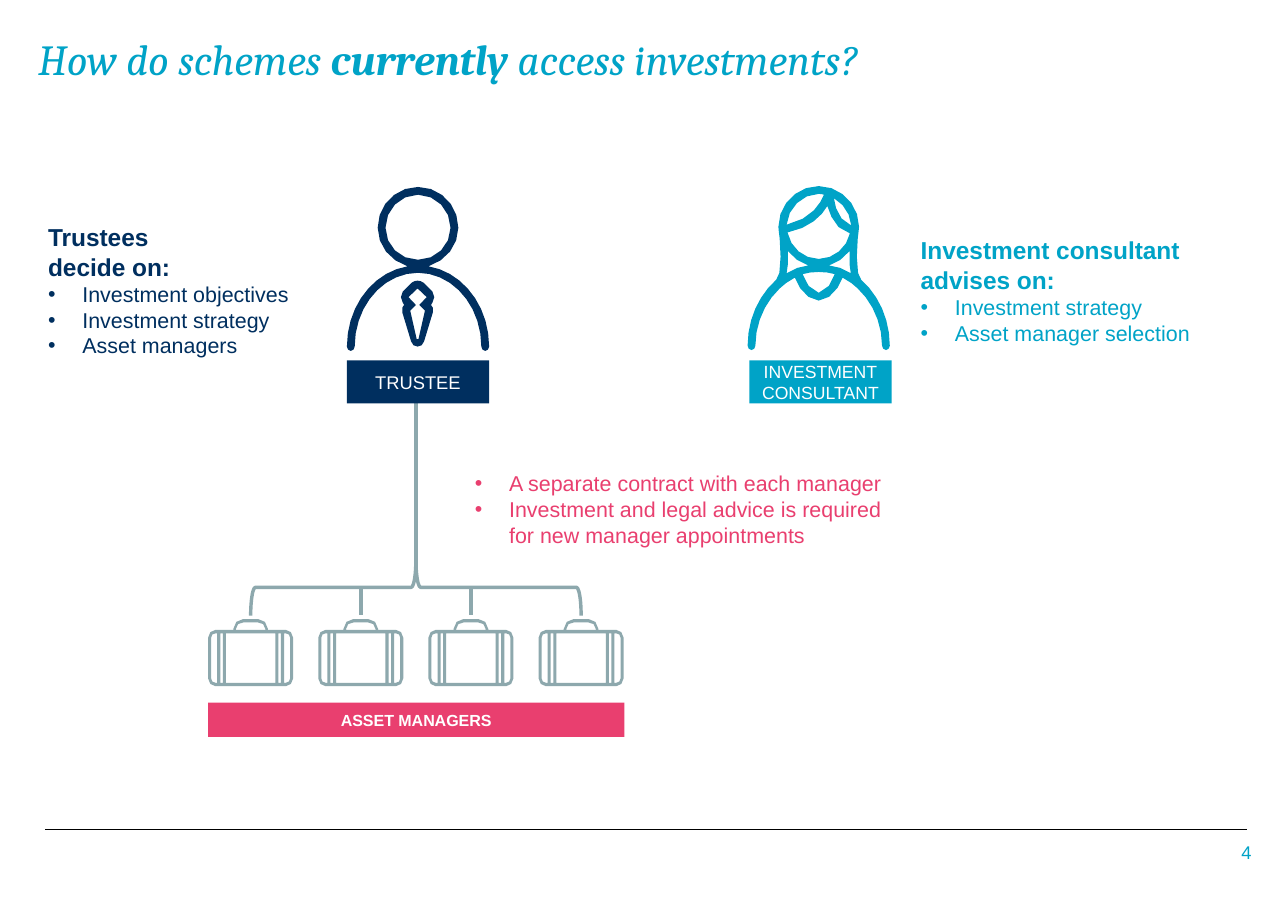
from dataclasses import dataclass
from math import dist

from lxml import etree
from pptx import Presentation
from pptx.dml.color import RGBColor as Rgb
from pptx.enum.shapes import MSO_CONNECTOR as Link, MSO_SHAPE as Shape
from pptx.enum.text import MSO_ANCHOR as Anchor, MSO_AUTO_SIZE as Fit, PP_ALIGN as Align
from pptx.oxml.ns import qn
from pptx.util import Cm, Pt

# Content
TITLE = [("How do schemes ", False), ("currently", True), (" access investments?", False)]
PAGE = "4"
# colour, box in cm, heading, bullets
NOTES = [
    ("navy", (0.86, 5, 6.99, 3.43), "Trustees\vdecide on:",
     ["Investment objectives", "Investment strategy", "Asset managers"]),
    ("cyan", (20.98, 5.3, 7.47, 2.82), "Investment consultant advises on:",
     ["Investment strategy", "Asset manager selection"]),
    ("pink", (10.7, 10.72, 10.24, 2.06), None,
     ["A separate contract with each manager",
      "Investment and legal advice is required for new manager appointments"]),
]
# colour, box in cm, lines, type size, bold
TAGS = [
    ("navy", (8, 8.31, 3.28, 0.99), ["TRUSTEE"], 12, False),
    ("cyan", (17.28, 8.31, 3.28, 0.99), ["INVESTMENT", "CONSULTANT"], 11.5, False),
    ("pink", (4.8, 16.2, 9.6, 0.79), ["ASSET MANAGERS"], 10.5, True),
]

# Icon outlines in cm: a start, then line ends (x, y) or curves (x1, y1, x2, y2, x, y).
# x runs from the icon's axis, y from its top. How the right side is completed:
JOIN, PAIR, ONCE = "joined to its mirror", "repeated as its mirror", "drawn as it is"
CAP = [(1.64, 3.73, 1.6, 3.78, 1.55, 3.78), (1.5, 3.78, 1.46, 3.73, 1.46, 3.68)]
MAN = [
    (JOIN, [(0, 0), (0.52, 0, 0.93, 0.43, 0.93, 0.94), (0.93, 1.35, 0.65, 1.7, 0.24, 1.83),
            (1.03, 1.96, 1.64, 2.74, 1.64, 3.68), *CAP, (1.46, 2.74, 0.8, 1.98, 0, 1.98)]),
    (JOIN, [(0, 0.18), (0.42, 0.18, 0.75, 0.53, 0.75, 0.94), (0.75, 1.35, 0.42, 1.68, 0, 1.68)]),
]
TIE = [
    (JOIN, [(0, 2.16), (0.05, 2.16, 0.1, 2.18, 0.14, 2.21), (0.34, 2.41),
            (0.4, 2.49, 0.4, 2.59, 0.34, 2.67), (0.31, 2.72),
            (0.34, 2.74, 0.38, 2.81, 0.35, 2.9), (0.15, 3.56), (0.13, 3.64, 0.07, 3.68, 0, 3.68)]),
    (JOIN, [(0, 2.34), (0.21, 2.54), (0.04, 2.72), (0.17, 2.85), (0.02, 3.51)]),
]
WOMAN = [
    (JOIN, [(0, 0), (0.51, 0, 0.93, 0.43, 0.93, 0.94), (0.92, 1.04),
            (0.92, 1.04, 0.88, 1.32, 0.88, 1.63), (0.88, 1.98, 0.92, 2.1, 0.98, 2.16),
            (1.38, 2.51, 1.64, 3.07, 1.64, 3.68), *CAP, (1.46, 3.15, 1.23, 2.67, 0.9, 2.36),
            (0.82, 2.29, 0.7, 2.18, 0.55, 2.11), (0.48, 2.34, 0.25, 2.64, 0, 2.64)]),
    (JOIN, [(0, 1.98), (0.15, 1.98, 0.26, 2, 0.37, 2.03), (0.33, 2.18, 0.17, 2.46, 0, 2.46)]),
    (ONCE, [(-0.72, 1.07), (-0.21, 0.97, 0.07, 0.69, 0.2, 0.46), (0.27, 0.69, 0.4, 1.02, 0.72, 1.09),
            (0.65, 1.42, 0.35, 1.68, 0, 1.68), (-0.35, 1.68, -0.65, 1.42, -0.72, 1.07)]),
    (ONCE, [(0.75, 0.91), (0.47, 0.81, 0.37, 0.48, 0.35, 0.28), (0.58, 0.41, 0.73, 0.64, 0.75, 0.91)]),
    (ONCE, [(0, 0.18), (0.05, 0.18, 0.09, 0.19, 0.12, 0.2), (0.05, 0.38, -0.15, 0.76, -0.74, 0.89),
            (-0.71, 0.51, -0.38, 0.18, 0, 0.18)]),
    (PAIR, [(0.74, 2.01), (0.71, 1.91, 0.71, 1.77, 0.71, 1.5),
            (0.58, 1.65, 0.43, 1.78, 0.24, 1.83), (0.41, 1.85, 0.58, 1.9, 0.74, 2.01)]),
]
BAG = [
    (JOIN, [(0, 0), (0.17, 0), (0.29, 0, 0.4, 0.1, 0.4, 0.23), (0.4, 0.25), (0.81, 0.25),
            (0.9, 0.25, 0.98, 0.33, 0.98, 0.43), (0.98, 1.37),
            (0.98, 1.47, 0.9, 1.55, 0.81, 1.55)]),
    (JOIN, [(0.17, 0.08), (0.26, 0.08, 0.34, 0.13, 0.34, 0.23), (0.34, 0.25)]),
    (JOIN, [(0.57, 0.33), (0.57, 1.47)]),
    (PAIR, [(0.64, 0.33), (0.7, 0.33), (0.7, 1.47), (0.64, 1.47)]),
    (PAIR, [(0.77, 0.33), (0.81, 0.33), (0.87, 0.33, 0.91, 0.37, 0.91, 0.43), (0.91, 1.37),
            (0.91, 1.43, 0.87, 1.47, 0.81, 1.47), (0.77, 1.47)]),
]


@dataclass
class Theme:
    navy = Rgb.from_string("002F5F")
    cyan = Rgb.from_string("00A3C7")
    pink = Rgb.from_string("E93F6F")
    grey = Rgb.from_string("8DA8AD")
    black = Rgb.from_string("000000")
    white = Rgb.from_string("FFFFFF")
    head, body = "Cambria", "Arial"
    title, lead, text, page = 28, 16, 14, 12
    rule, branch = 0.75, 2.25


def style(para, size, color, bold=False, face=Theme.body):
    font = para.font
    font.name, font.size, font.bold = face, Pt(size), bold
    font.color.rgb = color


def paint(shape, color):
    shape.shadow.inherit = False
    shape.fill.solid()
    shape.fill.fore_color.rgb = color
    shape.line.fill.background()


def line(x1, y1, x2, y2, color, width):
    link = shapes.add_connector(Link.STRAIGHT, *map(Cm, (x1, y1, x2, y2)))
    link.line.color.rgb = color
    link.line.width = Pt(width)
    etree.SubElement(link._element.spPr, qn("a:effectLst"))


def chords(route):
    """Cut the curves of a route into short chords."""
    spots = [route[0]]
    for part in route[1:]:
        if len(part) == 2:
            spots.append(part)
            continue
        ends = [spots[-1], part[:2], part[2:4], part[4:]]
        steps = max(2, round(sum(map(dist, ends, ends[1:])) / 0.3))
        for n in range(1, steps + 1):
            t = n / steps
            mix = ((1 - t) ** 3, 3 * t * (1 - t) ** 2, 3 * t * t * (1 - t), t ** 3)
            spots.append(tuple(sum(m * e[k] for m, e in zip(mix, ends)) for k in (0, 1)))
    return spots


def icon(parts, mid, top, color):
    """One filled shape; inner loops are holes."""
    loops = []
    for mode, route in parts:
        spots = chords(route)
        twin = [(-x, y) for x, y in reversed(spots)]
        loops += {JOIN: [spots + twin], PAIR: [spots, twin], ONCE: [spots]}[mode]
    form = None
    for loop in loops:
        first, *rest = [(Cm(mid + x), Cm(top + y)) for x, y in loop]
        if form:
            form.move_to(*first)
        else:
            form = shapes.build_freeform(*first)
        form.add_line_segments(rest, close=True)
    paint(form.convert_to_shape(), color)


def bullet(para):
    props = para._p.get_or_add_pPr()
    props.set("marL", str(Cm(0.79)))
    props.set("indent", str(-Cm(0.79)))
    etree.SubElement(props, qn("a:buFont"), typeface=Theme.body)
    etree.SubElement(props, qn("a:buChar"), char="•")


def note(color, box, lead, items):
    frame = shapes.add_textbox(*map(Cm, box)).text_frame
    frame.word_wrap = True
    for i, words in enumerate(([lead] if lead else []) + items):
        para = frame.add_paragraph() if i else frame.paragraphs[0]
        para.text = words
        if words == lead:
            style(para, Theme.lead, color, True)
        else:
            bullet(para)
            style(para, Theme.text, color)


def tag(color, box, lines, size, bold):
    shape = shapes.add_shape(Shape.RECTANGLE, *map(Cm, box))
    paint(shape, color)
    frame = shape.text_frame
    frame.vertical_anchor = Anchor.MIDDLE
    for i, words in enumerate(lines):
        para = frame.add_paragraph() if i else frame.paragraphs[0]
        para.text, para.alignment = words, Align.CENTER
        style(para, size, Theme.white, bold)


deck = Presentation()
deck.slide_width, deck.slide_height = Cm(29.7), Cm(21)
slide = deck.slides.add_slide(deck.slide_layouts[5])
shapes = slide.shapes

# Title
title = shapes.title
title.left, title.top, title.width, title.height = map(Cm, (0.6, 0.6, 23.44, 3.51))
frame = title.text_frame
frame.auto_size, frame.vertical_anchor = Fit.NONE, Anchor.TOP
frame.margin_left = frame.margin_right = Cm(0.28)
frame.margin_top = frame.margin_bottom = Cm(0.15)
para = frame.paragraphs[0]
para.alignment = Align.LEFT
style(para, Theme.title, Theme.cyan, face=Theme.head)
para.font.italic = True
for words, bold in TITLE:
    run = para.add_run()
    run.text, run.font.bold = words, bold

# Footer
line(1.04, 19.13, 28.75, 19.13, Theme.black, Theme.rule)
foot = shapes.add_textbox(*map(Cm, (27.13, 19.35, 2.06, 0.61))).text_frame
foot.word_wrap, foot.vertical_anchor = True, Anchor.MIDDLE
foot.margin_left = foot.margin_right = Cm(0.33)
foot.paragraphs[0].text, foot.paragraphs[0].alignment = PAGE, Align.RIGHT
style(foot.paragraphs[0], Theme.page, Theme.cyan)

# Tree from the trustee to the managers, with one bag under each branch
AXIS, FIRST, STEP, COUNT = 9.59, 5.78, 2.54, 4
line(AXIS, 9.3, AXIS, 13.08, Theme.grey, Theme.branch)
span = STEP * (COUNT - 1)
box = map(Cm, (AXIS - 0.65, 13.54 - span / 2, 1.3, span))
brace = shapes.add_shape(Shape.LEFT_BRACE, *box)
brace.rotation, brace.shadow.inherit = 90, False
brace.fill.background()
brace.line.color.rgb, brace.line.width = Theme.grey, Pt(Theme.branch)
for i in range(COUNT):
    mid = FIRST + i * STEP
    if 0 < i < COUNT - 1:
        line(mid, 13.54, mid, 14.17, Theme.grey, Theme.branch)
    icon(BAG, mid, 14.27, Theme.grey)

# People, labels and notes
for parts, mid, top, color in [(MAN, 9.64, 4.31, Theme.navy), (TIE, 9.63, 4.31, Theme.navy),
                               (WOMAN, 18.88, 4.29, Theme.cyan)]:
    icon(parts, mid, top, color)
for color, *rest in TAGS:
    tag(getattr(Theme, color), *rest)
for color, *rest in NOTES:
    note(getattr(Theme, color), *rest)

deck.save("out.pptx")
